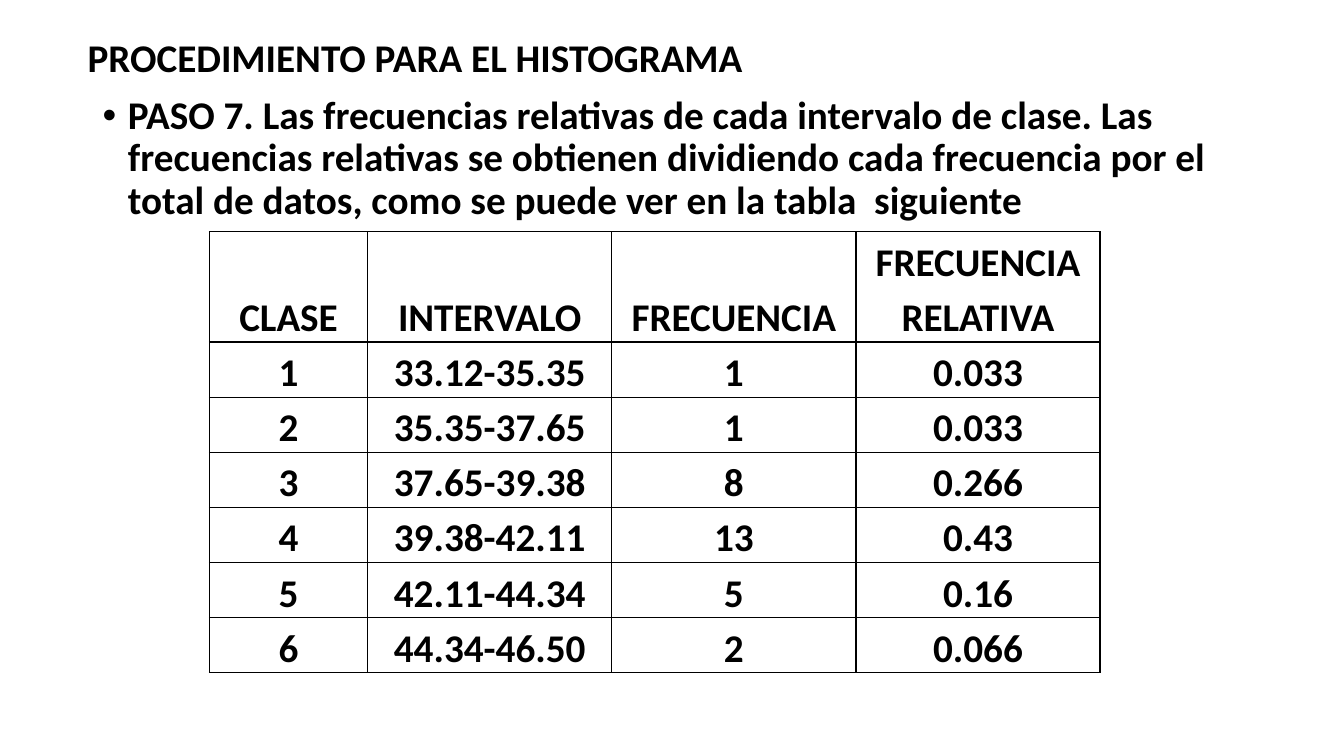
from lxml import etree
from pptx import Presentation
from pptx.dml.color import RGBColor
from pptx.enum import text as t
from pptx.oxml import ns
from pptx.util import Pt

BLACK = RGBColor(0, 0, 0)
WHITE = RGBColor(255, 255, 255)
HEADS = ["CLASE", "INTERVALO", "FRECUENCIA", "FRECUENCIA RELATIVA"]
ROWS = [
    ["1", "33.12-35.35", "1", "0.033"],
    ["2", "35.35-37.65", "1", "0.033"],
    ["3", "37.65-39.38", "8", "0.266"],
    ["4", "39.38-42.11", "13", "0.43"],
    ["5", "42.11-44.34", "5", "0.16"],
    ["6", "44.34-46.50", "2", "0.066"],
]
STEP = (
    "PASO 7. Las frecuencias relativas de cada intervalo de clase. "
    "Las frecuencias relativas se obtienen dividiendo cada frecuencia "
    "por el total de datos, como se puede ver en la tabla  siguiente"
)


def write(frame, words, align=t.PP_ALIGN.LEFT, line=0.9, before=0, after=0):
    para = frame.paragraphs[0]
    para.alignment = align
    para.line_spacing = line
    para.space_before = Pt(before)
    para.space_after = Pt(after)
    run = para.add_run()
    run.text = words
    font = run.font
    font.name = "Calibri"
    font.size = Pt(28)
    font.bold = True
    font.color.rgb = BLACK
    return para


def place(shape, left, top, width, height, anchor):
    shape.left, shape.top = Pt(left), Pt(top)
    shape.width, shape.height = Pt(width), Pt(height)
    frame = shape.text_frame
    frame.auto_size = t.MSO_AUTO_SIZE.NONE
    frame.word_wrap = True
    frame.vertical_anchor = anchor
    return frame


def bullet(para):
    props = para._p.get_or_add_pPr()
    props.set("marL", str(Pt(18)))
    props.set("indent", str(Pt(-18)))
    font = etree.SubElement(props, ns.qn("a:buFont"))
    font.set("typeface", "Arial")
    mark = etree.SubElement(props, ns.qn("a:buChar"))
    mark.set("char", "•")


def border(cell):
    props = cell._tc.get_or_add_tcPr()
    for side in ("lnL", "lnR", "lnT", "lnB"):
        line = etree.SubElement(props, ns.qn("a:" + side), w=str(Pt(1)))
        fill = etree.SubElement(line, ns.qn("a:solidFill"))
        etree.SubElement(fill, ns.qn("a:srgbClr"), val=str(BLACK))


def fill_cell(cell, words):
    cell.margin_left = cell.margin_right = Pt(3.6)
    cell.margin_top = cell.margin_bottom = 0
    cell.vertical_anchor = t.MSO_ANCHOR.BOTTOM
    border(cell)
    cell.fill.background()
    write(cell.text_frame, words, align=t.PP_ALIGN.CENTER, line=1.15, after=10)


def add_grid(slide, left, top, widths, heights, data):
    shape = slide.shapes.add_table(
        len(heights), len(widths), Pt(left), Pt(top),
        Pt(sum(widths)), Pt(sum(heights)))
    grid = shape.table
    grid.first_row = grid.horz_banding = False
    for col, width in zip(grid.columns, widths):
        col.width = Pt(width)
    for row, height, items in zip(grid.rows, heights, data):
        row.height = Pt(height)
        for cell, words in zip(row.cells, items):
            fill_cell(cell, words)


def main():
    deck = Presentation()
    deck.slide_width, deck.slide_height = Pt(960), Pt(540)
    slide = deck.slides.add_slide(deck.slide_layouts[1])
    back = slide.background.fill
    back.solid()
    back.fore_color.rgb = WHITE
    title = place(slide.shapes.title, 55.4, 20.2, 828, 45.4,
                  t.MSO_ANCHOR.MIDDLE)
    write(title, "PROCEDIMIENTO PARA EL HISTOGRAMA")
    body = place(slide.placeholders[1], 66.2, 64.8, 861, 347,
                 t.MSO_ANCHOR.TOP)
    bullet(write(body, STEP, before=10))
    add_grid(slide, 149.6, 165.6, [113] + [174.4] * 3,
             [78.6] + [39.3] * len(ROWS), [HEADS] + ROWS)
    deck.save("out.pptx")


if __name__ == "__main__":
    main()
